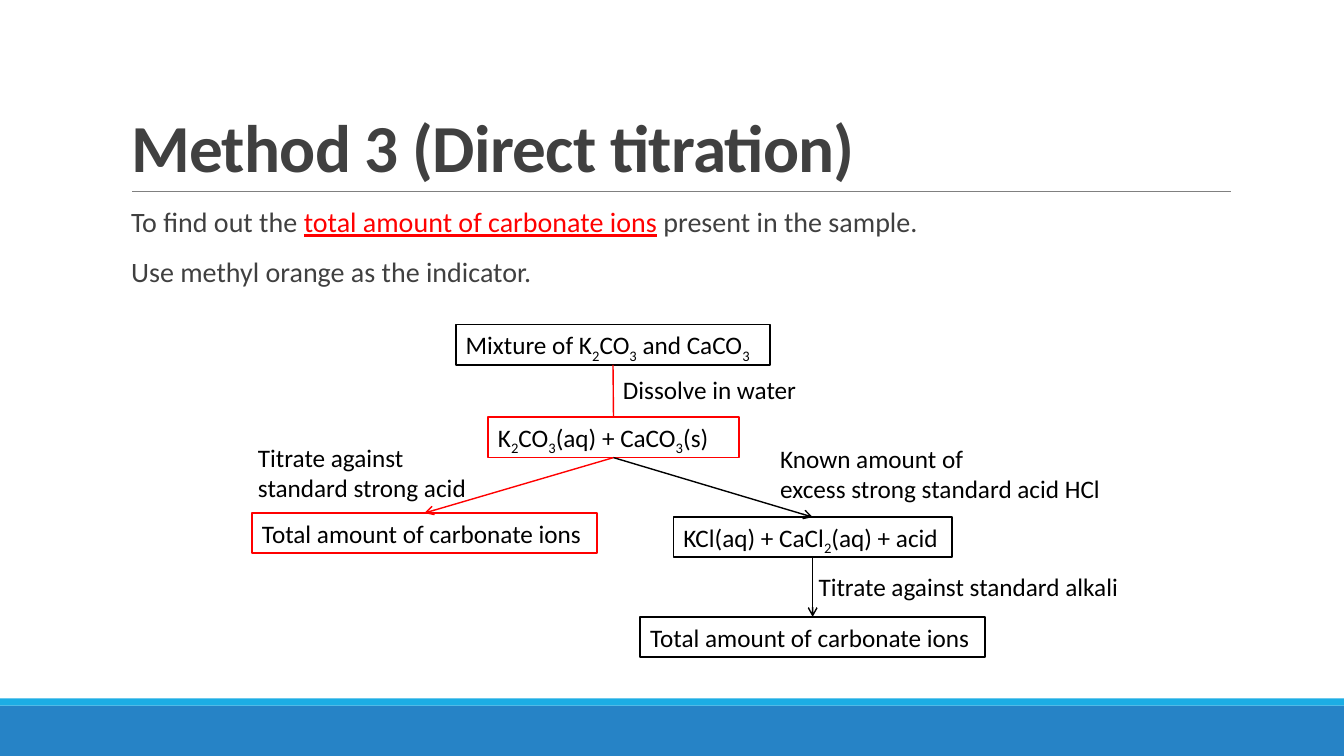
"""Build a slide with a flow chart of a direct titration."""
from dataclasses import dataclass

from pptx import Presentation, util as u
from pptx.dml.color import RGBColor
from pptx.enum import shapes as es, text as et
from pptx.oxml.ns import qn

PX = 9144
DARK, BLACK, RED, WHITE = "404040", "000000", "FF0000", "FFFFFF"
BLUE, CYAN, GREY = "2683C6", "1CADE4", "808080"
TOP, BOTTOM = 0, 2
HIGH = 40


@dataclass
class Box:
    """A framed step of the chart; an underscore marks a subscript."""
    name: str
    left: int
    top: int
    width: int
    words: str
    hue: str


@dataclass
class Link:
    """A line from the foot of one box to the head of another."""
    start: str
    end: str
    hue: str
    arrow: bool


@dataclass
class Label:
    """A free note beside a link."""
    left: int
    top: int
    width: int
    lines: tuple[str, ...]


TOTAL = "Total amount of carbonate ions"
BOXES = [
    Box("mix", 452, 322, 312, "Mixture of K_2CO_3 and CaCO_3", BLACK),
    Box("water", 484, 414, 249, "K_2CO_3(aq) + CaCO_3(s)", RED),
    Box("direct", 250, 509, 342, TOTAL, RED),
    Box("acid", 668, 513, 276, "KCl(aq) + CaCl_2(aq) + acid", BLACK),
    Box("back", 635, 612, 342, TOTAL, BLACK),
]
LINKS = [
    Link("mix", "water", RED, False),
    Link("water", "direct", RED, True),
    Link("water", "acid", BLACK, True),
    Link("acid", "back", BLACK, True),
]
LABELS = [
    Label(608, 366, 229, ("Dissolve in water",)),
    Label(764, 435, 341, ("Known amount of", "excess strong standard acid HCl")),
    Label(802, 562, 320, ("Titrate against standard alkali",)),
    Label(246, 434, 229, ("Titrate against", "standard strong acid")),
]
BODY = [
    [("To find out the ", DARK, False), (TOTAL.lower(), RED, True),
     (" present in the sample.", DARK, False)],
    [("Use methyl orange as the indicator.", DARK, False)],
]


def rgb(code: str) -> RGBColor:
    """Turn a hex string into a colour."""
    return RGBColor.from_string(code)


def px(*sizes: int) -> list[u.Emu]:
    """Turn pixels into EMU."""
    return [u.Emu(size * PX) for size in sizes]


def write(para, words: str, size: int, hue: str):
    """Add one run and return it."""
    run = para.add_run()
    run.text = words
    run.font.name = "Calibri"
    run.font.size = u.Pt(size)
    run.font.color.rgb = rgb(hue)
    return run


def formula(para, words: str) -> None:
    """Add text whose underscores each lower the next sign."""
    first, *rest = words.split("_")
    write(para, first, 18, BLACK)
    for part in rest:
        low = write(para, part[0], 18, BLACK)
        low.font._element.set("baseline", "-25000")
        if part[1:]:
            write(para, part[1:], 18, BLACK)


def rect(slide, left: int, top: int, width: int, high: int, fill: str):
    """Draw a plain rectangle without a line."""
    shape = slide.shapes.add_shape(
        es.MSO_SHAPE.RECTANGLE, *px(left, top, width, high))
    shape.shadow.inherit = False
    shape.fill.solid()
    shape.fill.fore_color.rgb = rgb(fill)
    shape.line.fill.background()
    return shape


def line(slide, ends: tuple[int, ...], hue: str, width: float):
    """Draw a straight line without a shadow."""
    wire = slide.shapes.add_connector(es.MSO_CONNECTOR.STRAIGHT, *px(*ends))
    wire.line.color.rgb = rgb(hue)
    wire.line.width = u.Pt(width)
    props = wire._element.spPr
    props.append(props.makeelement(qn("a:effectLst"), {}))
    return wire


def draw_box(slide, box: Box):
    """Draw a framed step and return its shape."""
    shape = rect(slide, box.left, box.top, box.width, HIGH, WHITE)
    shape.line.color.rgb = rgb(box.hue)
    shape.line.width = u.Pt(1.25)
    frame = shape.text_frame
    frame.word_wrap = True
    frame.vertical_anchor = et.MSO_ANCHOR.TOP
    frame.paragraphs[0].alignment = et.PP_ALIGN.LEFT
    formula(frame.paragraphs[0], box.words)
    return shape


def draw_link(slide, link: Link, steps: dict) -> None:
    """Join two steps, with an arrowhead if asked."""
    wire = line(slide, (0, 0, 0, 0), link.hue, 1)
    wire.begin_connect(steps[link.start], BOTTOM)
    wire.end_connect(steps[link.end], TOP)
    if link.arrow:
        edge = wire.line._get_or_add_ln()
        edge.append(edge.makeelement(qn("a:tailEnd"), {"type": "arrow"}))


def draw_label(slide, label: Label) -> None:
    """Draw a note, one paragraph a line."""
    high = 10 + 30 * len(label.lines)
    note = slide.shapes.add_textbox(
        *px(label.left, label.top, label.width, high))
    frame = note.text_frame
    frame.word_wrap = False
    for spot, words in enumerate(label.lines):
        para = frame.add_paragraph() if spot else frame.paragraphs[0]
        write(para, words, 18, BLACK)


def place(shape, left: int, top: int, width: int, high: int):
    """Move a placeholder and return its text frame."""
    shape.left, shape.top, shape.width, shape.height = px(
        left, top, width, high)
    shape.text_frame.auto_size = et.MSO_AUTO_SIZE.NONE
    return shape.text_frame


def draw_text(slide) -> None:
    """Fill the title and the body."""
    frame = place(slide.shapes.title, 120, 31, 1100, 159)
    frame.vertical_anchor = et.MSO_ANCHOR.BOTTOM
    para = frame.paragraphs[0]
    para.alignment = et.PP_ALIGN.LEFT
    para.line_spacing = 0.85
    head = write(para, "Method 3 (Direct titration)", 48, DARK)
    head.font.bold = True
    head.font._element.set("spc", "-50")
    frame = place(slide.placeholders[1], 120, 202, 1100, 106)
    frame.margin_left = frame.margin_right = 0
    for spot, runs in enumerate(BODY):
        para = frame.add_paragraph() if spot else frame.paragraphs[0]
        para.line_spacing = 0.9
        para.space_before, para.space_after = u.Pt(12), u.Pt(2)
        props = para._p.get_or_add_pPr()
        props.set("marL", str(10 * PX))
        props.set("indent", str(-10 * PX))
        props.append(props.makeelement(qn("a:buChar"), {"char": " "}))
        for words, hue, under in runs:
            write(para, words, 20, hue).font.underline = under


def main() -> None:
    """Build and save the slide."""
    deck = Presentation()
    deck.slide_width, deck.slide_height = px(1333, 750)
    slide = deck.slides.add_slide(deck.slide_layouts[1])
    rect(slide, 0, 700, 1333, 50, BLUE)
    rect(slide, 0, 693, 1333, 7, CYAN)
    line(slide, (131, 190, 1221, 190), GREY, 0.5)
    draw_text(slide)
    steps = {box.name: draw_box(slide, box) for box in BOXES}
    for link in LINKS:
        draw_link(slide, link, steps)
    for label in LABELS:
        draw_label(slide, label)
    deck.save("out.pptx")


if __name__ == "__main__":
    main()
